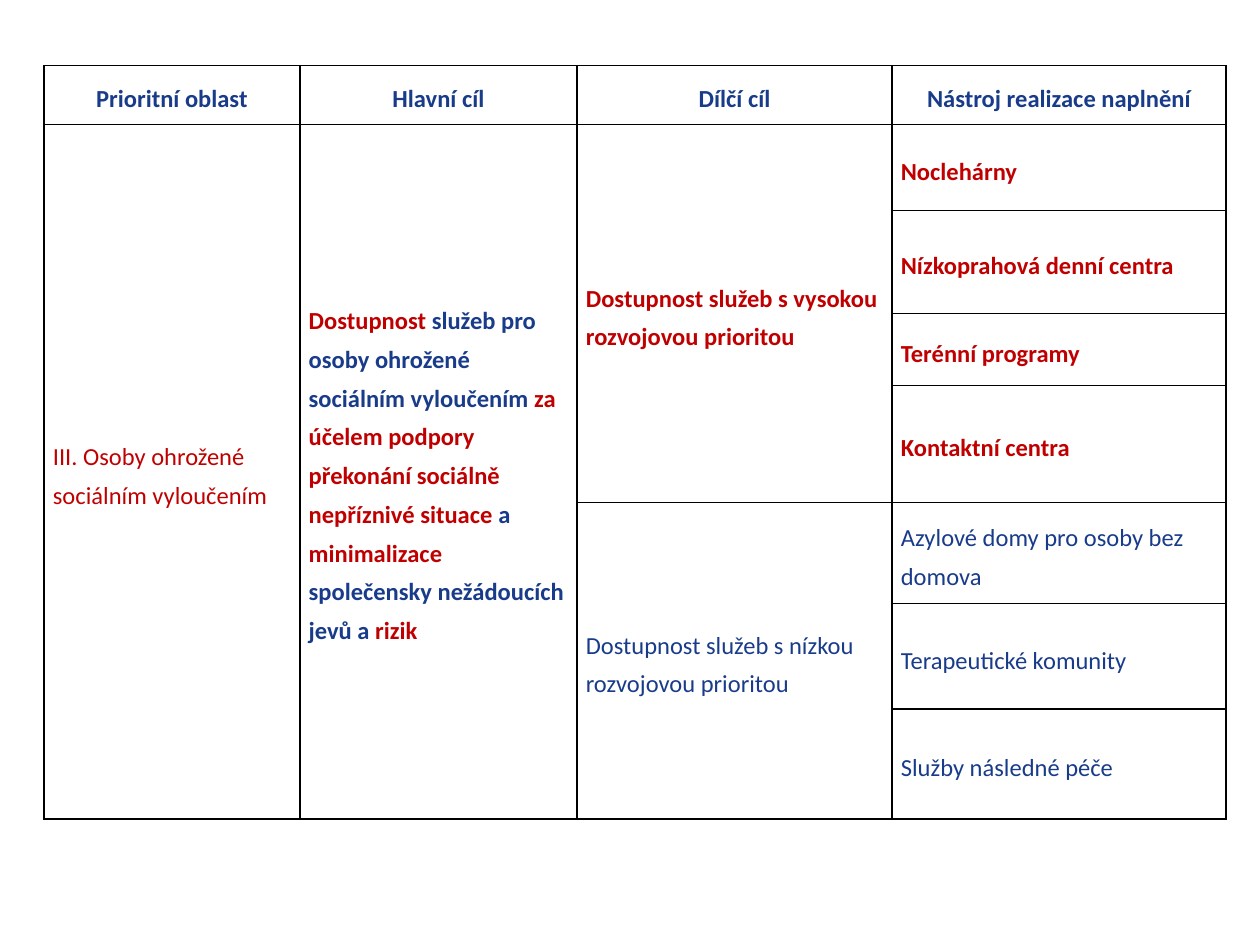
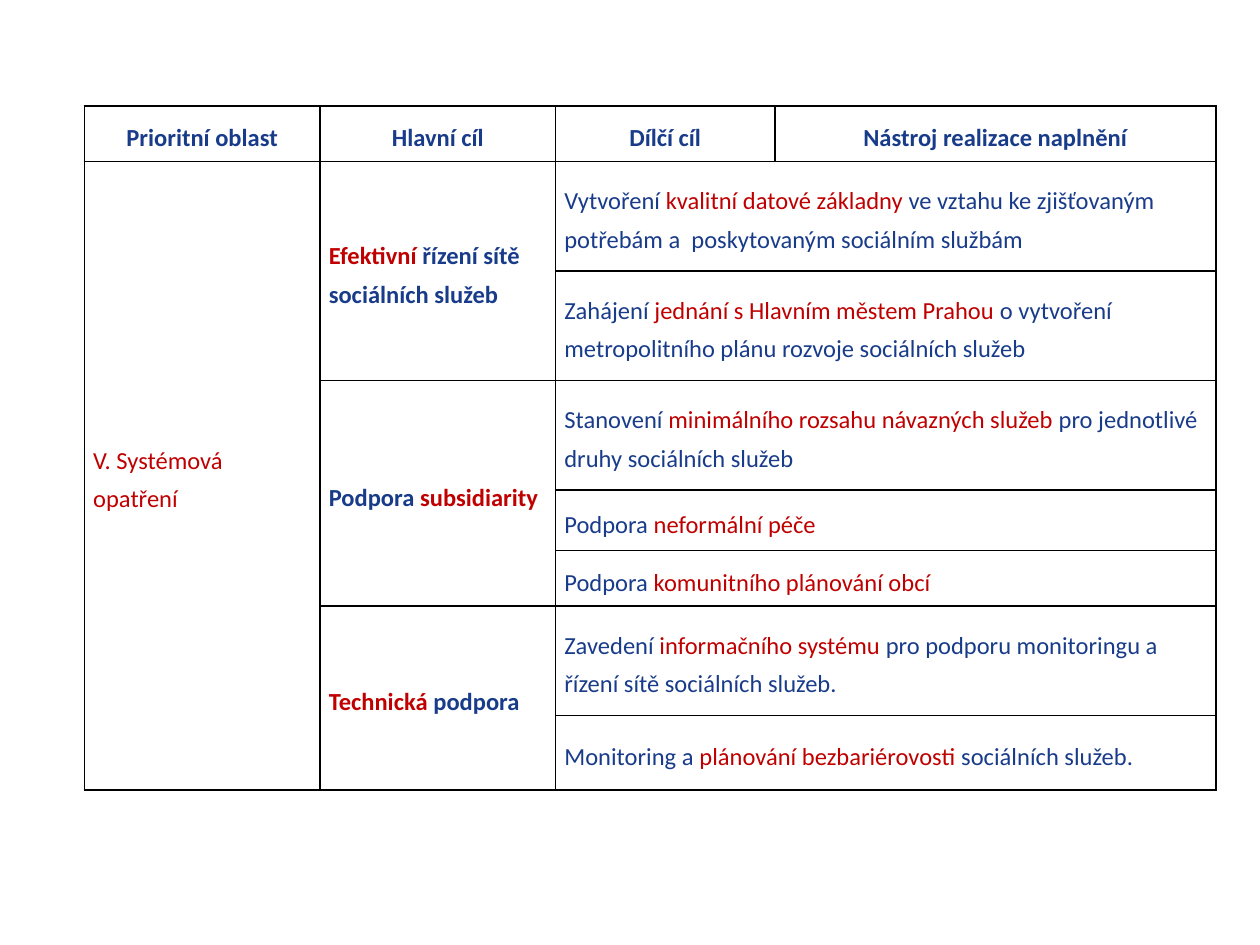
from lxml.etree import SubElement
from pptx import Presentation
from pptx.dml.color import RGBColor
from pptx.enum.text import MSO_ANCHOR, PP_ALIGN
from pptx.oxml.ns import qn
from pptx.util import Inches, Pt

BLUE = RGBColor(0x18, 0x3B, 0x8A)
RED = RGBColor(0xC0, 0x00, 0x00)
BLACK = RGBColor(0, 0, 0)
HEADS = ["Prioritní oblast", "Hlavní cíl", "Dílčí cíl", "Nástroj realizace naplnění"]


def frame(cell):
    """Give a cell its margins, four black borders and no fill."""
    cell.margin_left = cell.margin_right = Inches(0.07)
    cell.margin_top = cell.margin_bottom = 0
    cell.vertical_anchor = MSO_ANCHOR.MIDDLE
    props = cell._tc.get_or_add_tcPr()
    for side in ("lnL", "lnR", "lnT", "lnB"):
        line = SubElement(props, qn(f"a:{side}"), w=str(Pt(1)))
        fill = SubElement(line, qn("a:solidFill"))
        SubElement(fill, qn("a:srgbClr"), val=str(BLACK))
    cell.fill.background()


def write(cell, text, bold, align=PP_ALIGN.LEFT):
    """Write text whose parts between bars are blue and red by turns."""
    para = cell.text_frame.paragraphs[0]
    para.alignment = align
    para.line_spacing = 1.3
    para.space_after = Pt(8)
    para.font.name = "Calibri"
    para.font.size = Pt(14)
    para.font.bold = bold
    for i, part in enumerate(text.split("|")):
        if part:
            run = para.add_run()
            run.text = part
            run.font.color.rgb = RED if i % 2 else BLUE


# Each cell: row, column, rows spanned, columns spanned, bold, text
people = [
    (1, 0, 7, 1, False, "|III. Osoby ohrožené sociálním vyloučením"),
    (1, 1, 7, 1, True,
     "|Dostupnost |služeb pro osoby ohrožené sociálním vyloučením "
     "|za účelem podpory překonání sociálně nepříznivé situace |a "
     "|minimalizace| společensky nežádoucích jevů a |rizik"),
    (1, 2, 4, 1, True, "|Dostupnost služeb s vysokou rozvojovou prioritou"),
    (5, 2, 3, 1, False, "Dostupnost služeb s nízkou rozvojovou prioritou"),
    (1, 3, 1, 1, True, "|Noclehárny"),
    (2, 3, 1, 1, True, "|Nízkoprahová denní centra"),
    (3, 3, 1, 1, True, "|Terénní programy"),
    (4, 3, 1, 1, True, "|Kontaktní centra"),
    (5, 3, 1, 1, False, "Azylové domy pro osoby bez domova"),
    (6, 3, 1, 1, False, "Terapeutické komunity"),
    (7, 3, 1, 1, False, "Služby následné péče"),
]
steps = [
    "Vytvoření |kvalitní datové základny |ve vztahu ke zjišťovaným potřebám "
    "a  poskytovaným sociálním službám",
    "Zahájení |jednání s Hlavním městem Prahou |o vytvoření metropolitního "
    "plánu rozvoje sociálních služeb",
    "Stanovení |minimálního rozsahu návazných služeb| pro jednotlivé druhy "
    "sociálních služeb",
    "Podpora |neformální péče",
    "Podpora |komunitního plánování obcí",
    "Zavedení |informačního systému |pro podporu monitoringu a řízení sítě "
    "sociálních služeb.",
    "Monitoring a |plánování bezbariérovosti |sociálních služeb.",
]
system = [
    (1, 0, 7, 1, False, "|V. Systémová opatření"),
    (1, 1, 2, 1, True, "|Efektivní |řízení sítě sociálních služeb"),
    (3, 1, 3, 1, True, "Podpora |subsidiarity"),
    (6, 1, 2, 1, True, "|Technická| podpora"),
] + [(row, 2, 1, 2, False, step) for row, step in enumerate(steps, 1)]

# Each slide: left, top, column widths, row heights, cells
slides = [
    (0.35, 0.52, [2.03, 2.2, 2.5, 2.65],
     [0.47, 0.68, 0.82, 0.57, 0.93, 0.8, 0.84, 0.87], people),
    (0.67, 0.84, [1.87, 1.87, 1.74, 3.5],
     [0.44, 0.87, 0.87, 0.87, 0.48, 0.44, 0.87, 0.59], system),
]

deck = Presentation()
deck.slide_width = Inches(10)
deck.slide_height = Inches(7.5)

for left, top, widths, heights, cells in slides:
    slide = deck.slides.add_slide(deck.slide_layouts[6])
    table = slide.shapes.add_table(
        len(heights), len(widths), Inches(left), Inches(top),
        Inches(sum(widths)), Inches(sum(heights))).table
    for column, width in zip(table.columns, widths):
        column.width = Inches(width)
    for row, height in zip(table.rows, heights):
        row.height = Inches(height)
    for cell in table.iter_cells():
        frame(cell)
    for col, head in enumerate(HEADS):
        write(table.cell(0, col), head, True, PP_ALIGN.CENTER)
    for row, col, down, across, bold, text in cells:
        cell = table.cell(row, col)
        if down * across > 1:
            cell.merge(table.cell(row + down - 1, col + across - 1))
        write(cell, text, bold)

deck.save("out.pptx")
